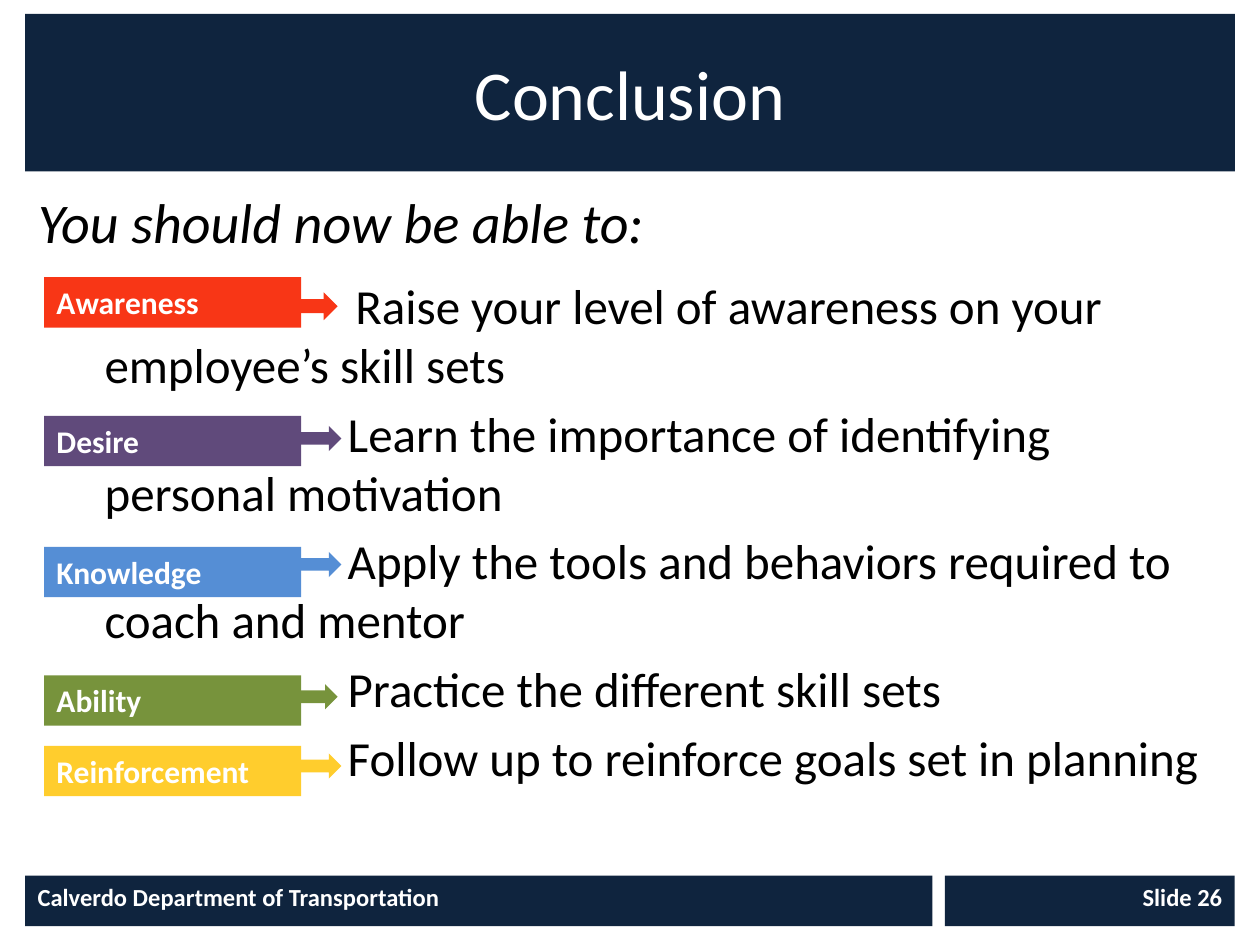
"""Build the training conclusion slide with five labelled outcomes."""
from typing import NamedTuple

from pptx import Presentation
from pptx.dml.color import RGBColor
from pptx.enum.shapes import MSO_SHAPE
from pptx.enum.text import MSO_ANCHOR, MSO_AUTO_SIZE, PP_ALIGN
from pptx.util import Emu, Pt

PX = 9144
NAVY, WHITE, BLACK = "0F243E", "FFFFFF", "000000"


class Box(NamedTuple):
    """A rectangle in px, 100 to the inch."""
    x: int
    y: int
    w: int
    h: int


class Outcome(NamedTuple):
    """A coloured label, its arrow and the sentence beside it."""
    label: str
    text: str
    color: str
    y: int
    arrow: Box
    start: int = 246
    before: float = 5.6


OUTCOMES = [
    Outcome("Awareness", "Raise your level of awareness on your employee’s skill sets",
            "F83616", 220, Box(235, 232, 33, 22), 252, 12),
    Outcome("Desire", "Learn the importance of identifying personal motivation",
            "604A7B", 330, Box(235, 338, 36, 20)),
    Outcome("Knowledge", "Apply the tools and behaviors required to coach and mentor",
            "558ED5", 434, Box(235, 438, 36, 20)),
    Outcome("Ability", "Practice the different skill sets",
            "77933C", 536, Box(232, 543, 36, 20)),
    Outcome("Reinforcement", "Follow up to reinforce goals set in planning",
            "FFCD2D", 592, Box(235, 598, 36, 20)),
]


def px(n: int) -> Emu:
    """Turn px into EMU."""
    return Emu(n * PX)


def rgb(color: str) -> RGBColor:
    """Turn a hex string into a colour."""
    return RGBColor.from_string(color)


def place(sp, box: Box) -> None:
    """Move and size a shape."""
    sp.left, sp.top, sp.width, sp.height = map(px, box)


def fill(sp, color: str) -> None:
    """Give a shape a solid fill."""
    sp.fill.solid()
    sp.fill.fore_color.rgb = rgb(color)


def write(p, text: str, *, size: int, color: str = WHITE, bold: bool = False,
          italic: bool = False, align=PP_ALIGN.LEFT, before: float = 0) -> None:
    """Write one formatted run into a paragraph."""
    p.alignment = align
    p.space_before = Pt(before)
    r = p.add_run()
    r.text = text
    f = r.font
    f.name, f.size, f.bold, f.italic = "Calibri", Pt(size), bold, italic
    f.color.rgb = rgb(color)


def indent(p, margin: int, first: int) -> None:
    """Remove the bullet and set the left margin and first-line indent."""
    pPr = p._p.get_or_add_pPr()
    pPr.set("marL", str(px(margin)))
    pPr.set("indent", str(px(first)))
    pPr.append(pPr.makeelement(
        "{http://schemas.openxmlformats.org/drawingml/2006/main}buNone", {}))


def add_block(s, kind: MSO_SHAPE, box: Box, color: str):
    """Draw a flat filled shape."""
    sp = s.shapes.add_shape(kind, *map(px, box))
    sp.shadow.inherit = False
    sp.line.fill.background()
    fill(sp, color)
    return sp


def add_bar(s, box: Box, color: str, text: str, size: int, align=PP_ALIGN.LEFT) -> None:
    """Draw a rectangle with bold text at its top."""
    tf = add_block(s, MSO_SHAPE.RECTANGLE, box, color).text_frame
    tf.word_wrap = True
    tf.vertical_anchor = MSO_ANCHOR.TOP
    write(tf.paragraphs[0], text, size=size, bold=True, align=align)


def add_title(s, text: str) -> None:
    """Fill the title placeholder."""
    sp = s.shapes.title
    place(sp, Box(20, 11, 960, 125))
    fill(sp, NAVY)
    tf = sp.text_frame
    tf.auto_size = MSO_AUTO_SIZE.NONE
    tf.vertical_anchor = MSO_ANCHOR.MIDDLE
    write(tf.paragraphs[0], text, size=40, align=PP_ALIGN.CENTER)


def add_body(s, heading: str, outcomes: list[Outcome]) -> None:
    """Fill the body placeholder with the heading and the outcomes."""
    sp = s.placeholders[1]
    place(sp, Box(20, 144, 960, 540))
    tf = sp.text_frame
    tf.auto_size = MSO_AUTO_SIZE.NONE
    p = tf.paragraphs[0]
    write(p, heading, size=32, color=BLACK, italic=True)
    indent(p, 0, 0)
    margin = 53
    for o in outcomes:
        p = tf.add_paragraph()
        write(p, o.text, size=28, color=BLACK, before=o.before)
        indent(p, margin, o.start - margin)


def main() -> None:
    """Build and save the slide."""
    prs = Presentation()
    prs.slide_width, prs.slide_height = px(1000), px(750)
    s = prs.slides.add_slide(prs.slide_layouts[1])
    add_title(s, "Conclusion")
    add_body(s, "You should now be able to:", OUTCOMES)
    add_bar(s, Box(20, 695, 720, 40), NAVY, "Calverdo Department of Transportation", 14)
    add_bar(s, Box(750, 695, 230, 40), NAVY, "Slide 26", 14, PP_ALIGN.RIGHT)
    for o in OUTCOMES:
        add_bar(s, Box(35, o.y, 204, 40), o.color, o.label, 18)
        add_block(s, MSO_SHAPE.RIGHT_ARROW, o.arrow, o.color)
    prs.save("out.pptx")


if __name__ == "__main__":
    main()
